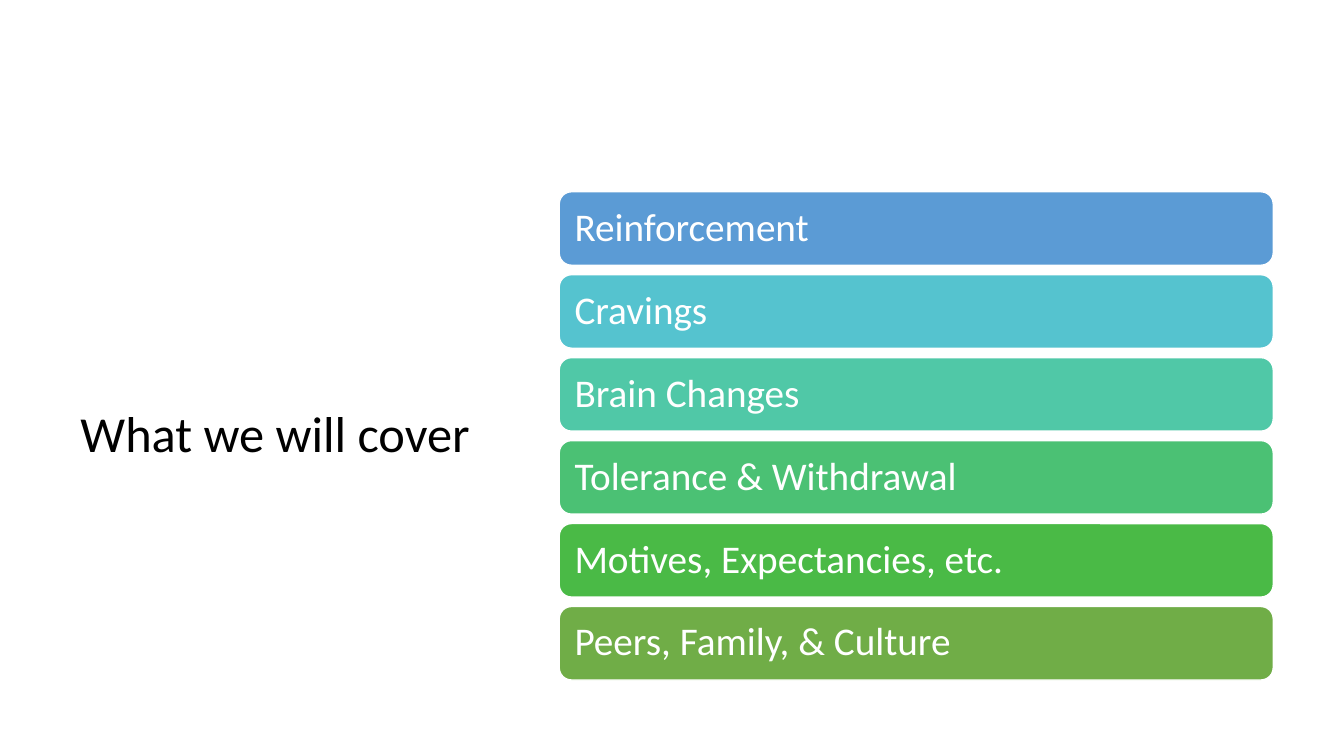
import dataclasses

import pptx
import pptx.dml.color
import pptx.enum.shapes
import pptx.enum.text
import pptx.util

Pt = pptx.util.Pt


@dataclasses.dataclass(frozen=True)
class Theme:
    font: str = "Calibri"
    title_size: float = 36
    topic_size: float = 28
    line_spacing: float = 0.9
    ink: str = "000000"
    paper: str = "FFFFFF"
    topic_fills: tuple = ("5B9BD5", "55C3CF", "50C8A7", "4BC174", "4ABA46", "70AD47")


def color(code):
    return pptx.dml.color.RGBColor.from_string(code)


class SlideBuilder:
    def __init__(self, page, theme):
        self.page = page
        self.theme = theme

    def set_label(self, box, text, size, ink, margins):
        frame = box.text_frame
        frame.text = text
        frame.word_wrap = True
        frame.vertical_anchor = pptx.enum.text.MSO_ANCHOR.MIDDLE
        frame.margin_left = frame.margin_right = Pt(margins[0])
        frame.margin_top = frame.margin_bottom = Pt(margins[1])
        para = frame.paragraphs[0]
        para.alignment = pptx.enum.text.PP_ALIGN.LEFT
        para.line_spacing = self.theme.line_spacing
        span = para.runs[0]
        span.font.name = self.theme.font
        span.font.size = Pt(size)
        span.font.color.rgb = color(ink)

    def title(self, text, left, top, width, height):
        box = self.page.shapes.add_textbox(Pt(left), Pt(top), Pt(width), Pt(height))
        self.set_label(box, text, self.theme.title_size, self.theme.ink, (7.2, 3.6))

    def topic_bar(self, text, fill, left, top, width, height):
        box = self.page.shapes.add_shape(
            pptx.enum.shapes.MSO_SHAPE.ROUNDED_RECTANGLE,
            Pt(left), Pt(top), Pt(width), Pt(height),
        )
        box.shadow.inherit = False
        box.fill.solid()
        box.fill.fore_color.rgb = color(fill)
        box.line.color.rgb = color(self.theme.paper)
        box.line.width = Pt(1)
        self.set_label(box, text, self.theme.topic_size, self.theme.paper, (8.4, 8.4))


def main():
    topics = (
        "Reinforcement",
        "Cravings",
        "Brain Changes",
        "Tolerance & Withdrawal",
        "Motives, Expectancies, etc.",
        "Peers, Family, & Culture",
    )
    first_top, bar_height, bar_gap = 137, 52.5, 6.75

    deck = pptx.Presentation()
    deck.slide_width, deck.slide_height = Pt(960), Pt(540)
    theme = Theme()
    builder = SlideBuilder(deck.slides.add_slide(deck.slide_layouts[6]), theme)

    builder.title("What we will cover", 50.4, 134, 312, 355.5)
    for index, (topic, fill) in enumerate(zip(topics, theme.topic_fills)):
        top = first_top + index * (bar_height + bar_gap)
        builder.topic_bar(topic, fill, 399.5, top, 510, bar_height)

    deck.save("out.pptx")


if __name__ == "__main__":
    main()
